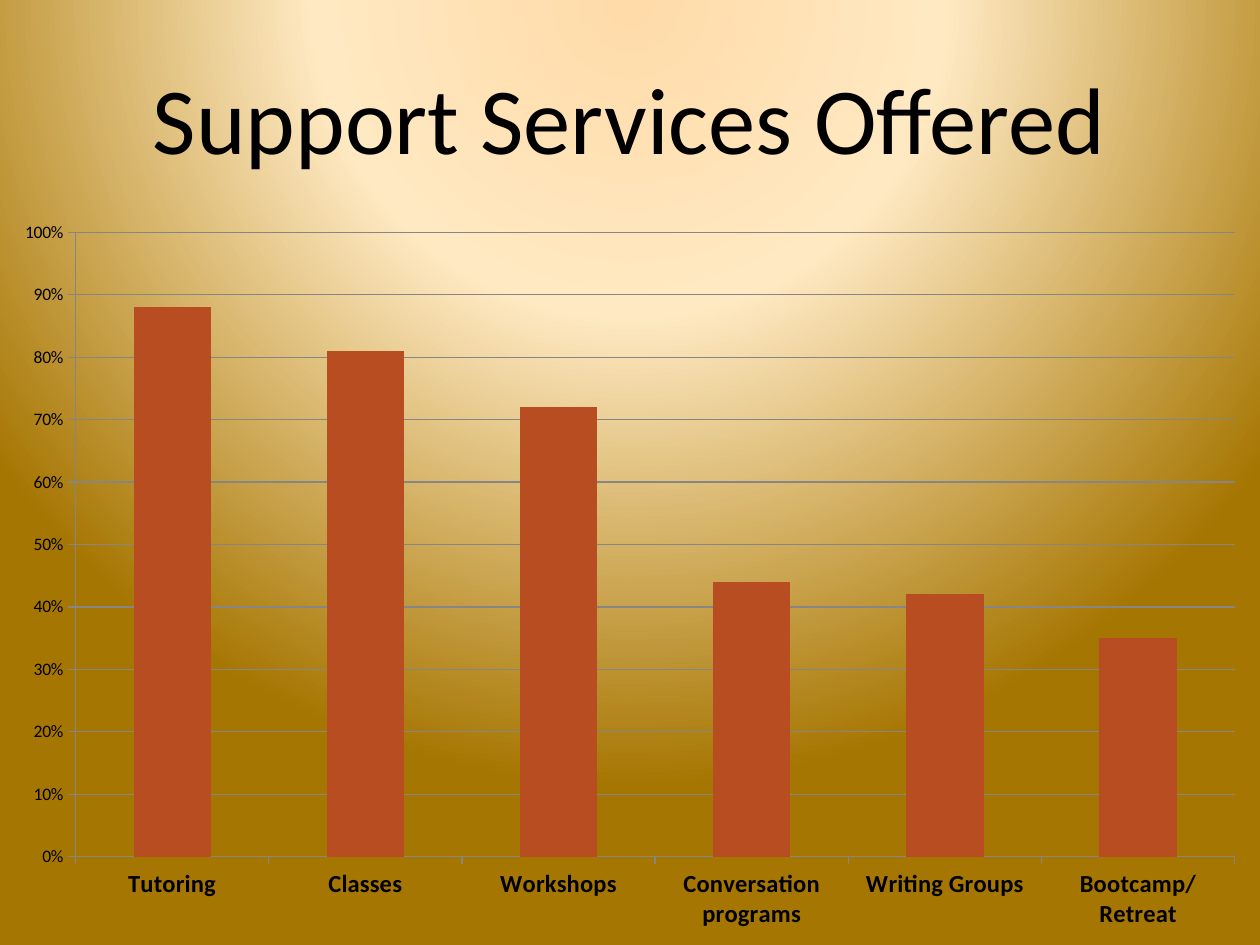
from lxml import etree
from pptx import Presentation
from pptx.chart.data import CategoryChartData
from pptx.dml.color import RGBColor
from pptx.enum.chart import XL_CHART_TYPE, XL_TICK_MARK
from pptx.enum.text import MSO_ANCHOR, PP_ALIGN
from pptx.oxml import parse_xml
from pptx.oxml.ns import nsdecls, qn
from pptx.util import Cm, Pt

COLUMNS = XL_CHART_TYPE.COLUMN_CLUSTERED
OUTSIDE = XL_TICK_MARK.OUTSIDE
MIDDLE = MSO_ANCHOR.MIDDLE
CENTER = PP_ALIGN.CENTER

TITLE = "Support Services Offered"
SERVICES = [
    ("Tutoring", 0.88),
    ("Classes", 0.81),
    ("Workshops", 0.72),
    ("Conversation programs", 0.44),
    ("Writing Groups", 0.42),
    ("Bootcamp/Retreat", 0.35),
]
FONT = "Calibri"
BLACK, BAR, LINE = "000000", "B74D21", "868686"
GRADIENT = [(0, "FFDBA9"), (40, "FFE9C2"), (100, "A67602")]
PLOT_AREA = {"x": 0.06, "y": 0.03, "w": 0.92, "h": 0.85}


def color(value):
    return RGBColor.from_string(value)


def style_font(font, size, bold=False):
    font.name, font.size, font.bold = FONT, Pt(size), bold
    font.color.rgb = color(BLACK)


def style_line(line):
    line.color.rgb = color(LINE)
    line.width = Pt(0.75)


def set_background(slide):
    """Fill the slide with a circular gradient centred above its top edge."""
    stops = "".join(
        f'<a:gs pos="{position * 1000}"><a:srgbClr val="{value}"/></a:gs>'
        for position, value in GRADIENT
    )
    background = parse_xml(
        f'<p:bg {nsdecls("p", "a")}><p:bgPr><a:gradFill rotWithShape="1">'
        f'<a:gsLst>{stops}</a:gsLst><a:path path="circle">'
        '<a:fillToRect l="50000" t="-80000" r="50000" b="180000"/>'
        "</a:path></a:gradFill><a:effectLst/></p:bgPr></p:bg>"
    )
    slide.element.cSld.insert(0, background)


def add_title(slide):
    box = slide.shapes.add_textbox(Cm(1.57), Cm(0.76), Cm(22.23), Cm(3.18))
    frame = box.text_frame
    frame.word_wrap = True
    frame.vertical_anchor = MIDDLE
    paragraph = frame.paragraphs[0]
    paragraph.alignment = CENTER
    run = paragraph.add_run()
    run.text = TITLE
    style_font(run.font, 54)


def set_plot_area(chart):
    """Fix the inner plot area as fractions of the chart's size."""
    plot_area = chart.plots[0]._element.getparent()
    layout = plot_area.find(qn("c:layout"))
    if layout is None:
        layout = etree.Element(qn("c:layout"))
        plot_area.insert(0, layout)
    manual = etree.SubElement(layout, qn("c:manualLayout"))
    settings = {"layoutTarget": "inner", "xMode": "edge", "yMode": "edge", **PLOT_AREA}
    for name, value in settings.items():
        etree.SubElement(manual, qn(f"c:{name}"), val=str(value))


def add_services_chart(slide):
    data = CategoryChartData(number_format="0%")
    data.categories = [name for name, _ in SERVICES]
    data.add_series("Series 1", [share for _, share in SERVICES])
    frame = slide.shapes.add_chart(COLUMNS, Cm(0), Cm(4.24), Cm(25.4), Cm(14.81), data)
    chart = frame.chart
    chart.has_legend = chart.has_title = False
    style_font(chart.font, 10)

    plot = chart.plots[0]
    plot.gap_width = 150
    plot.vary_by_categories = False
    fill = plot.series[0].format.fill
    fill.solid()
    fill.fore_color.rgb = color(BAR)

    for axis, size, bold in ((chart.category_axis, 14, True), (chart.value_axis, 10, False)):
        axis.major_tick_mark = OUTSIDE
        style_font(axis.tick_labels.font, size, bold)
        style_line(axis.format.line)

    values = chart.value_axis
    values.minimum_scale, values.maximum_scale, values.major_unit = 0, 1, 0.1
    values.tick_labels.number_format = "0%"
    values.tick_labels.number_format_is_linked = False
    values.has_major_gridlines = True
    style_line(values.major_gridlines.format.line)
    set_plot_area(chart)


def main():
    presentation = Presentation()
    presentation.slide_width, presentation.slide_height = Cm(25.4), Cm(19.05)
    slide = presentation.slides.add_slide(presentation.slide_layouts[6])
    set_background(slide)
    add_title(slide)
    add_services_chart(slide)
    presentation.save("out.pptx")


if __name__ == "__main__":
    main()
